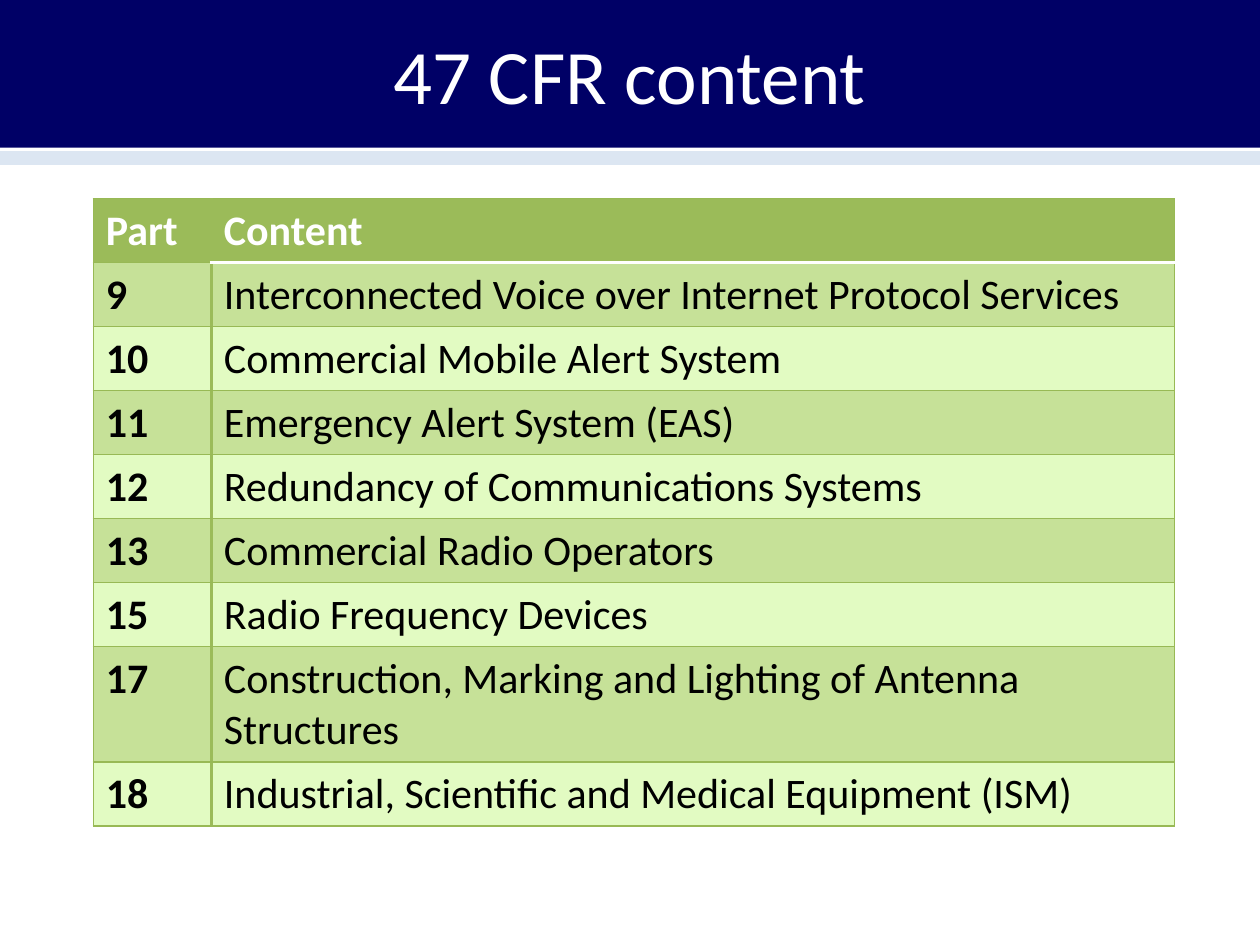
from lxml import etree
from pptx import Presentation
from pptx.dml.color import RGBColor
from pptx.enum.shapes import MSO_CONNECTOR, MSO_SHAPE
from pptx.enum.text import MSO_ANCHOR, PP_ALIGN
from pptx.oxml.ns import qn
from pptx.util import Cm, Pt

LINE = MSO_CONNECTOR.STRAIGHT
RECT = MSO_SHAPE.RECTANGLE
MIDDLE = MSO_ANCHOR.MIDDLE
CENTER = PP_ALIGN.CENTER

FONT = "Calibri"
NAVY = RGBColor(0x00, 0x00, 0x66)
PALE = RGBColor(0xDC, 0xE6, 0xF2)
WHITE = RGBColor(0xFF, 0xFF, 0xFF)
BLACK = RGBColor(0x00, 0x00, 0x00)
GREEN = RGBColor(0x9B, 0xBB, 0x59)
EDGE = RGBColor(0x98, 0xB9, 0x55)
DARK = RGBColor(0xC6, 0xE1, 0x98)
LIGHT = RGBColor(0xE2, 0xFB, 0xC2)

ROWS = [
    ("Part", "Content"),
    ("9", "Interconnected Voice over Internet Protocol Services"),
    ("10", "Commercial Mobile Alert System"),
    ("11", "Emergency Alert System (EAS)"),
    ("12", "Redundancy of Communications Systems"),
    ("13", "Commercial Radio Operators"),
    ("15", "Radio Frequency Devices"),
    ("17", "Construction, Marking and Lighting of Antenna Structures"),
    ("18", "Industrial, Scientific and Medical Equipment (ISM)"),
]


def add_run(para, text, size, color, bold=False):
    run = para.add_run()
    run.text = text
    font = run.font
    font.name, font.size, font.bold = FONT, Pt(size), bold
    font.color.rgb = color


def set_edges(cell, edges):
    """Draw the cell borders; edges maps L, R, T, B to (colour, points)."""
    props = cell._tc.get_or_add_tcPr()
    for place, side in enumerate("LRTB"):
        color, width = edges[side]
        line = etree.Element(qn(f"a:ln{side}"), w=str(Pt(width)))
        fill = etree.SubElement(line, qn("a:solidFill"))
        etree.SubElement(fill, qn("a:srgbClr"), val=str(color))
        props.insert(place, line)


def add_header(slide, left, top, width, height):
    # Navy band
    band = slide.shapes.add_shape(RECT, left, top, width, height)
    band.shadow.inherit = False
    band.fill.solid()
    band.fill.fore_color.rgb = NAVY
    band.line.fill.background()

    # Pale rule below the band
    level = top + height + Cm(0.2)
    rule = slide.shapes.add_connector(LINE, left, level, left + width, level)
    rule.line.color.rgb = PALE
    rule.line.width = Pt(8)
    etree.SubElement(rule._element.spPr, qn("a:effectLst"))

    # Title
    inset = Cm(1.27)
    box = slide.shapes.add_textbox(left + inset, top + Cm(0.1),
                                   width - 2 * inset, height)
    frame = box.text_frame
    frame.word_wrap = True
    frame.vertical_anchor = MIDDLE
    para = frame.paragraphs[0]
    para.alignment = CENTER
    add_run(para, "47 CFR content", 44, WHITE)


def add_parts(slide, left, top, width, height):
    table = slide.shapes.add_table(len(ROWS), 2, left, top,
                                   width, height).table
    table.columns[0].width = Cm(2.38)
    table.columns[1].width = width - Cm(2.38)
    thin, thick, white = (EDGE, 0.75), (GREEN, 2), (WHITE, 2)

    for r, texts in enumerate(ROWS):
        table.rows[r].height = Cm(2.32 if len(texts[1]) > 52 else 1.29)
        for c, text in enumerate(texts):
            cell = table.cell(r, c)
            cell.fill.solid()
            shade = DARK if r % 2 else LIGHT
            cell.fill.fore_color.rgb = shade if r else GREEN
            add_run(cell.text_frame.paragraphs[0], text, 24,
                    BLACK if r else WHITE, bold=r == 0 or c == 0)
            # Thick line between columns, white line under "Content"
            set_edges(cell, {
                "L": thick if c else thin,
                "R": thin if c else thick,
                "T": white if (r, c) == (1, 1) else thin,
                "B": white if (r, c) == (0, 1) else thin,
            })


def main():
    deck = Presentation()
    deck.slide_width, deck.slide_height = Cm(25.4), Cm(19.05)
    slide = deck.slides.add_slide(deck.slide_layouts[6])
    add_header(slide, 0, Cm(-0.2), deck.slide_width, Cm(3.18))
    add_parts(slide, Cm(1.88), Cm(4.01), Cm(21.8), Cm(12.64))
    deck.save("out.pptx")


if __name__ == "__main__":
    main()
